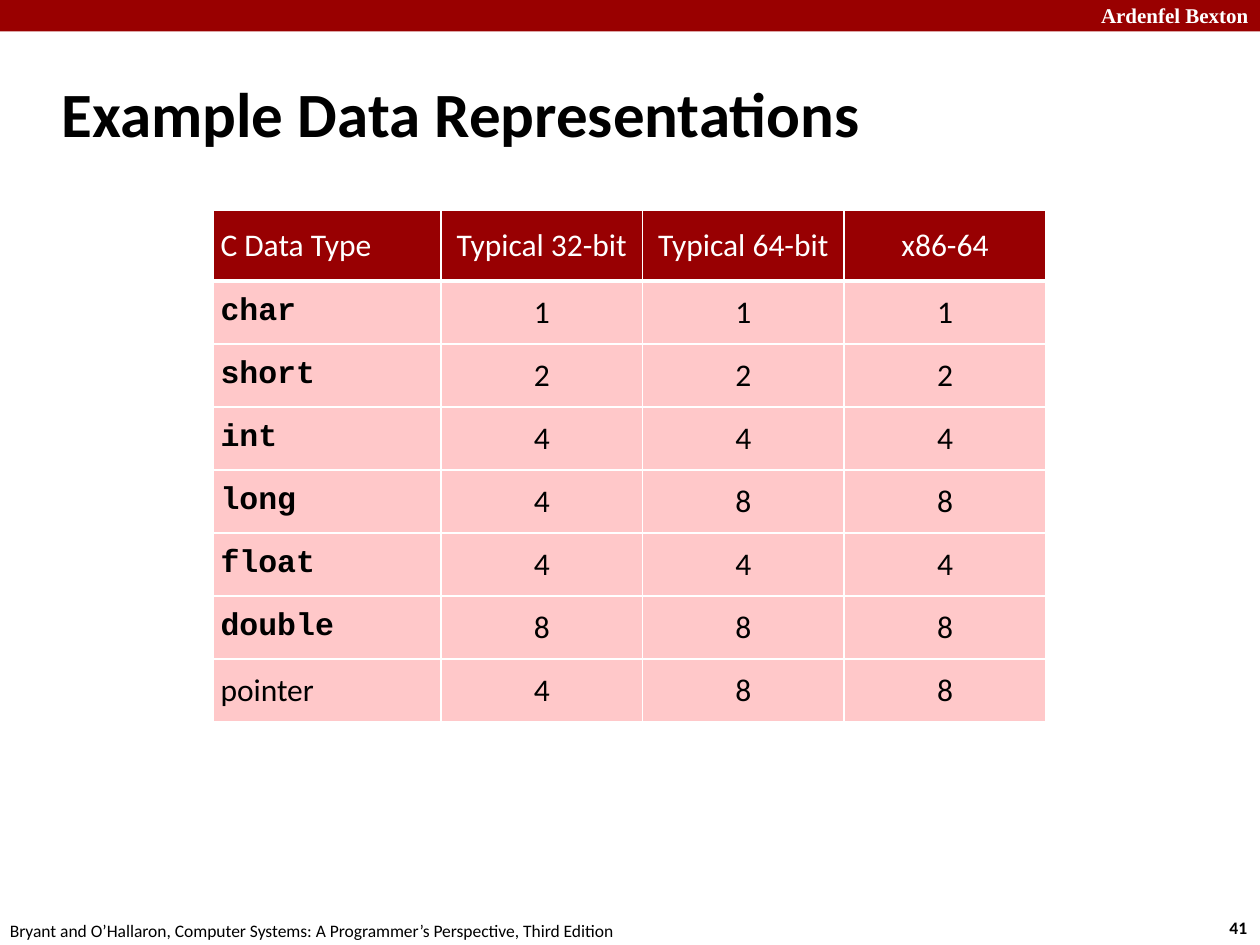
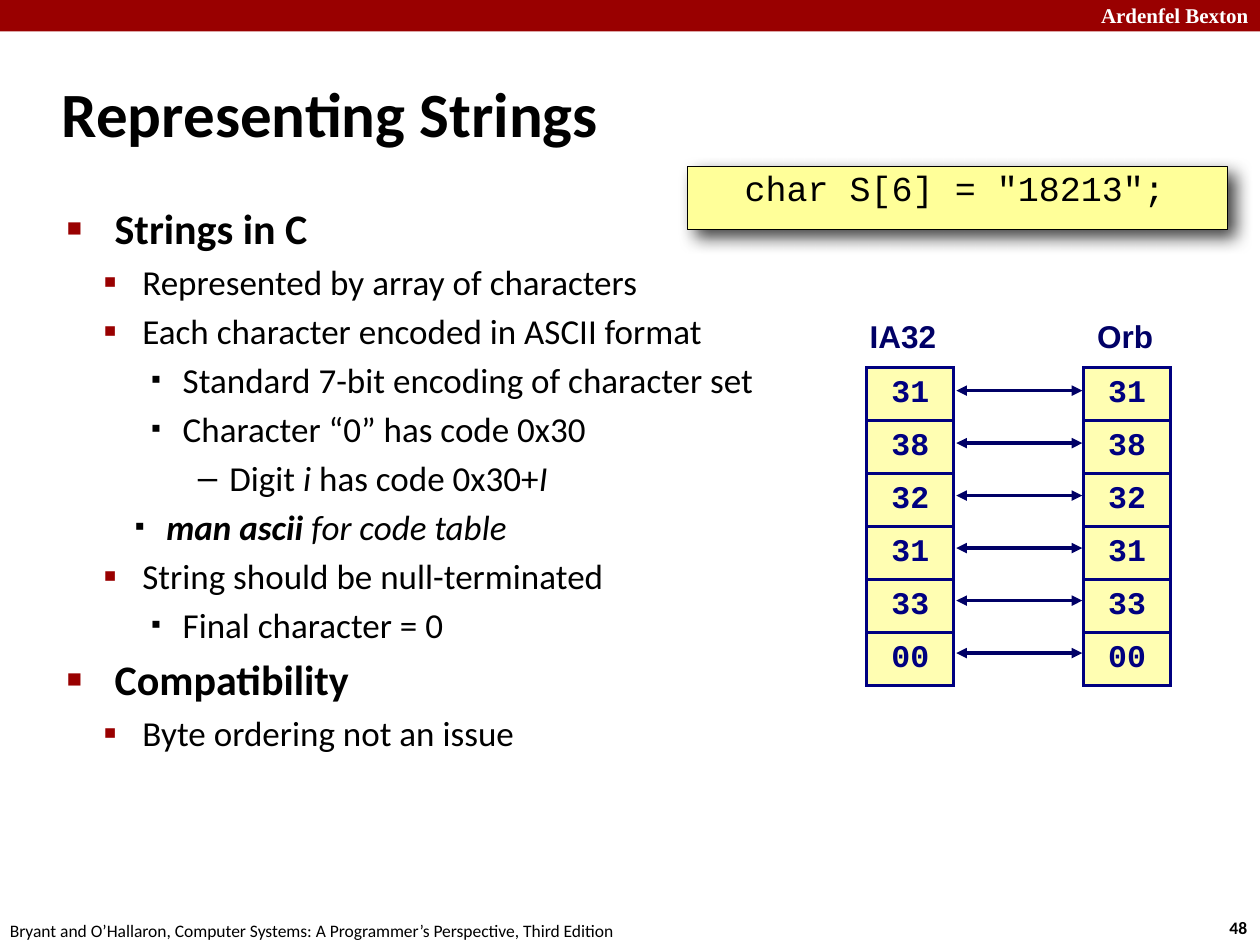
from lxml import etree
from pptx import Presentation
from pptx import util as u
from pptx.dml.color import RGBColor
from pptx.enum import shapes, text
from pptx.oxml import ns

RED = RGBColor(0x99, 0x00, 0x00)
HEADER_RED = RGBColor(0x98, 0x00, 0x02)
PINK = RGBColor(0xFF, 0xC8, 0xC9)
CODE_YELLOW = RGBColor(0xFF, 0xFF, 0x99)
BYTE_YELLOW = RGBColor(0xFF, 0xFE, 0xB2)
NAVY = RGBColor(0x00, 0x00, 0x66)
BYTE_NAVY = RGBColor(0x00, 0x00, 0x80)
BLACK = RGBColor(0x00, 0x00, 0x00)
WHITE = RGBColor(0xFF, 0xFF, 0xFF)

SANS, MONO = "Calibri", "Courier New"
LEFT, CENTER = text.PP_ALIGN.LEFT, text.PP_ALIGN.CENTER
TITLE_ONLY, TITLE_AND_BODY = 5, 1
SCHOOL = "Ardenfel Bexton"
BOOK = ("Bryant and O’Hallaron, Computer Systems: "
        "A Programmer’s Perspective, Third Edition")

BULLETS = {
    "topic": (0, 0.38, 0.38, "■", 60, RED),
    "point": (1, 0.6, 0.31, "▪", 110, RED),
    "detail": (2, 0.92, 0.25, "▪", 80, BLACK),
    "aside": (2, 0.79, 0.25, "▪", 80, BLACK),
    "dash": (3, 1.29, 0.25, "–", 100, BLACK),
}


def add_xml(parent, tag, **attributes):
    return etree.SubElement(parent, ns.qn(tag), attributes)


def add_color(parent, tag, color):
    return add_xml(add_xml(parent, tag), "a:srgbClr", val=str(color))


def set_font(font, size, color=BLACK, name=SANS, bold=False):
    font.size, font.name, font.bold = u.Pt(size), name, bold
    font.color.rgb = color


def set_margins(target, left, top, right, bottom):
    target.margin_left, target.margin_top = u.Inches(left), u.Inches(top)
    target.margin_right, target.margin_bottom = u.Inches(right), u.Inches(bottom)


class Deck:
    def __init__(self):
        self.presentation = Presentation()
        self.presentation.slide_width = u.Inches(10)
        self.presentation.slide_height = u.Inches(7.5)
        self.slide = None

    def start_slide(self, layout, title, number):
        layouts = self.presentation.slide_layouts
        self.slide = self.presentation.slides.add_slide(layouts[layout])
        self.rectangle(0, 0, 10, 0.25, RED)
        self.label(8.64, -0.03, 1.43, 0.3, SCHOOL, 12, WHITE,
                   "Times New Roman", True, wrap=True)
        self.label(9.66, 7.23, 0.37, 0.27, number, 10, bold=True)
        self.label(-0.02, 7.25, 5.08, 0.27, BOOK, 10)
        shape = self.slide.shapes.title
        self.place(shape, 0.39, 0.48, 8.3, 0.83)
        shape.text_frame.text = title
        shape.text_frame.vertical_anchor = text.MSO_ANCHOR.MIDDLE
        paragraph = shape.text_frame.paragraphs[0]
        paragraph.alignment = LEFT
        set_font(paragraph.font, 36, bold=True)

    def place(self, shape, left, top, width, height):
        shape.left, shape.top = u.Inches(left), u.Inches(top)
        shape.width, shape.height = u.Inches(width), u.Inches(height)
        shape.text_frame.auto_size = text.MSO_AUTO_SIZE.NONE

    def rectangle(self, left, top, width, height, fill):
        shape = self.slide.shapes.add_shape(
            shapes.MSO_SHAPE.RECTANGLE, u.Inches(left), u.Inches(top),
            u.Inches(width), u.Inches(height))
        shape.shadow.inherit = False
        shape.fill.solid()
        shape.fill.fore_color.rgb = fill
        shape.line.fill.background()
        return shape

    def label(self, left, top, width, height, words, size, color=BLACK,
              name=SANS, bold=False, align=LEFT, wrap=False):
        shape = self.slide.shapes.add_textbox(
            u.Inches(left), u.Inches(top), u.Inches(width), u.Inches(height))
        frame = shape.text_frame
        frame.word_wrap = wrap
        frame.text = words
        frame.paragraphs[0].alignment = align
        set_font(frame.paragraphs[0].font, size, color, name, bold)
        return shape

    def code_box(self, left, top, width, height, code):
        shape = self.rectangle(left, top, width, height, CODE_YELLOW)
        shape.line.color.rgb = BLACK
        shape.line.width = u.Pt(0.5)
        effects = shape.element.spPr.find(ns.qn("a:effectLst"))
        shadow = add_xml(effects, "a:outerShdw", blurRad=str(u.Pt(10)),
                         dist=str(u.Pt(6)), dir="2700000", algn="tl")
        add_xml(add_xml(shadow, "a:srgbClr", val=str(BLACK)),
                "a:alpha", val="75000")
        frame = shape.text_frame
        set_margins(frame, 0.03, 0.03, 0.07, 0.03)
        frame.vertical_anchor = text.MSO_ANCHOR.TOP
        frame.text = code
        paragraph = frame.paragraphs[0]
        paragraph.alignment = CENTER
        paragraph.line_spacing = 0.95
        set_font(paragraph.font, 20, name=MONO)

    def bullets(self, left, top, width, height, items):
        shape = self.slide.placeholders[1]
        self.place(shape, left, top, width, height)
        frame = shape.text_frame
        for index, (kind, *runs) in enumerate(items):
            paragraph = frame.add_paragraph() if index else frame.paragraphs[0]
            level, indent, hanging, symbol, percent, color = BULLETS[kind]
            paragraph.level = level
            topic = kind == "topic"
            set_font(paragraph.font, 24 if topic else 20, bold=topic)
            for words, *styles in runs:
                run = paragraph.add_run()
                run.text = words
                if "bold" in styles:
                    run.font.bold = True
                if "italic" in styles:
                    run.font.italic = True
            properties = paragraph._p.get_or_add_pPr()
            properties.set("marL", str(u.Inches(indent)))
            properties.set("indent", str(-u.Inches(hanging)))
            settings = etree.Element("settings")
            add_color(settings, "a:buClr", color)
            add_xml(settings, "a:buSzPct", val=str(percent * 1000))
            add_xml(settings, "a:buFont", typeface="Arial")
            add_xml(settings, "a:buChar", char=symbol)
            for position, setting in enumerate(list(settings)):
                properties.insert(position, setting)

    def table(self, left, top, widths, heights, rows, style):
        frame = self.slide.shapes.add_table(
            len(rows), len(widths), u.Inches(left), u.Inches(top),
            u.Inches(sum(widths)), u.Inches(sum(heights)))
        table = frame.table
        table.first_row = table.horz_banding = False
        for column, width in zip(table.columns, widths):
            column.width = u.Inches(width)
        for row, height in zip(table.rows, heights):
            row.height = u.Inches(height)
        for row_index, row in enumerate(rows):
            for column_index, words in enumerate(row):
                self.cell(table.cell(row_index, column_index), words,
                          **style(row_index, column_index, words))

    def cell(self, cell, words, fill, color, name, bold, align, border, edges):
        properties = cell._tc.get_or_add_tcPr()
        for side in "LRTB":
            line = add_xml(properties, "a:ln" + side,
                           w=str(u.Pt(edges.get(side, edges["all"]))))
            add_color(line, "a:solidFill", border)
        cell.fill.solid()
        cell.fill.fore_color.rgb = fill
        cell.vertical_anchor = text.MSO_ANCHOR.MIDDLE
        set_margins(cell, 0.06, 0.06, 0.06, 0.06)
        cell.text = words
        paragraph = cell.text_frame.paragraphs[0]
        paragraph.alignment = align
        set_font(paragraph.font, 18, color, name, bold)

    def double_arrow(self, left, right, y):
        connector = self.slide.shapes.add_connector(
            shapes.MSO_CONNECTOR.STRAIGHT, u.Inches(left), u.Inches(y),
            u.Inches(right), u.Inches(y))
        connector.line.color.rgb = NAVY
        connector.line.width = u.Pt(2)
        line = connector.element.spPr.find(ns.qn("a:ln"))
        for end in ("a:headEnd", "a:tailEnd"):
            add_xml(line, end, type="triangle")
        add_xml(connector.element.spPr, "a:effectLst")


def type_style(row, column, words):
    header = row == 0
    code = not header and column == 0 and words != "pointer"
    edges = {"all": 1}
    if row < 2:
        edges["B" if header else "T"] = 3
    return dict(fill=HEADER_RED if header else PINK,
                color=WHITE if header else BLACK,
                name=MONO if code else SANS, bold=code,
                align=CENTER if column else LEFT, border=WHITE, edges=edges)


def byte_style(row, column, words):
    return dict(fill=BYTE_YELLOW, color=BYTE_NAVY, name=MONO, bold=True,
                align=CENTER, border=BYTE_NAVY, edges={"all": 2})


def data_representations(deck):
    deck.start_slide(TITLE_ONLY, "Example Data Representations", "41")
    rows = [
        ("C Data Type", "Typical 32-bit", "Typical 64-bit", "x86-64"),
        ("char", "1", "1", "1"),
        ("short", "2", "2", "2"),
        ("int", "4", "4", "4"),
        ("long", "4", "8", "8"),
        ("float", "4", "4", "4"),
        ("double", "8", "8", "8"),
        ("pointer", "4", "8", "8"),
    ]
    deck.table(1.69, 1.67, [1.81] + [1.6] * 3, [0.56] + [0.5] * 7,
               rows, type_style)


def representing_strings(deck):
    deck.start_slide(TITLE_AND_BODY, "Representing Strings", "48")
    deck.code_box(5.46, 1.32, 4.28, 0.5, 'char S[6] = "18213";')
    deck.bullets(0.43, 1.56, 8.64, 5.44, [
        ("topic", ("Strings in C",)),
        ("point", ("Represented by array of characters",)),
        ("point", ("Each character encoded in ASCII format",)),
        ("detail", ("Standard 7-bit encoding of character set",)),
        ("detail", ("Character “0” has code 0x30",)),
        ("dash", ("Digit ",), ("i", "italic"), (" has code 0x30+",),
         ("I", "italic")),
        ("aside", ("man ascii", "bold", "italic"),
         (" for code table", "italic")),
        ("point", ("String should be null-terminated",)),
        ("detail", ("Final character = 0",)),
        ("topic", ("Compatibility",)),
        ("point", ("Byte ordering not an issue",)),
    ])
    for left, width, machine in ((6.84, 0.69, "IA32"), (8.63, 0.64, "Orb")):
        label = deck.label(left, 2.46, width, 0.42, machine, 18, NAVY,
                           "Arial", True, CENTER)
        set_margins(label.text_frame, 0.06, 0.06, 0.1, 0.06)
    string_bytes = ["31", "38", "32", "31", "33", "00"]
    row_height = 2.5 / len(string_bytes)
    for index in range(len(string_bytes)):
        deck.double_arrow(7.59, 8.59, 3.1 + index * row_height)
    for left in (6.88, 8.6):
        deck.table(left, 2.92, [0.69], [row_height] * len(string_bytes),
                   [(value,) for value in string_bytes], byte_style)


def main():
    deck = Deck()
    data_representations(deck)
    representing_strings(deck)
    deck.presentation.save("out.pptx")


if __name__ == "__main__":
    main()
